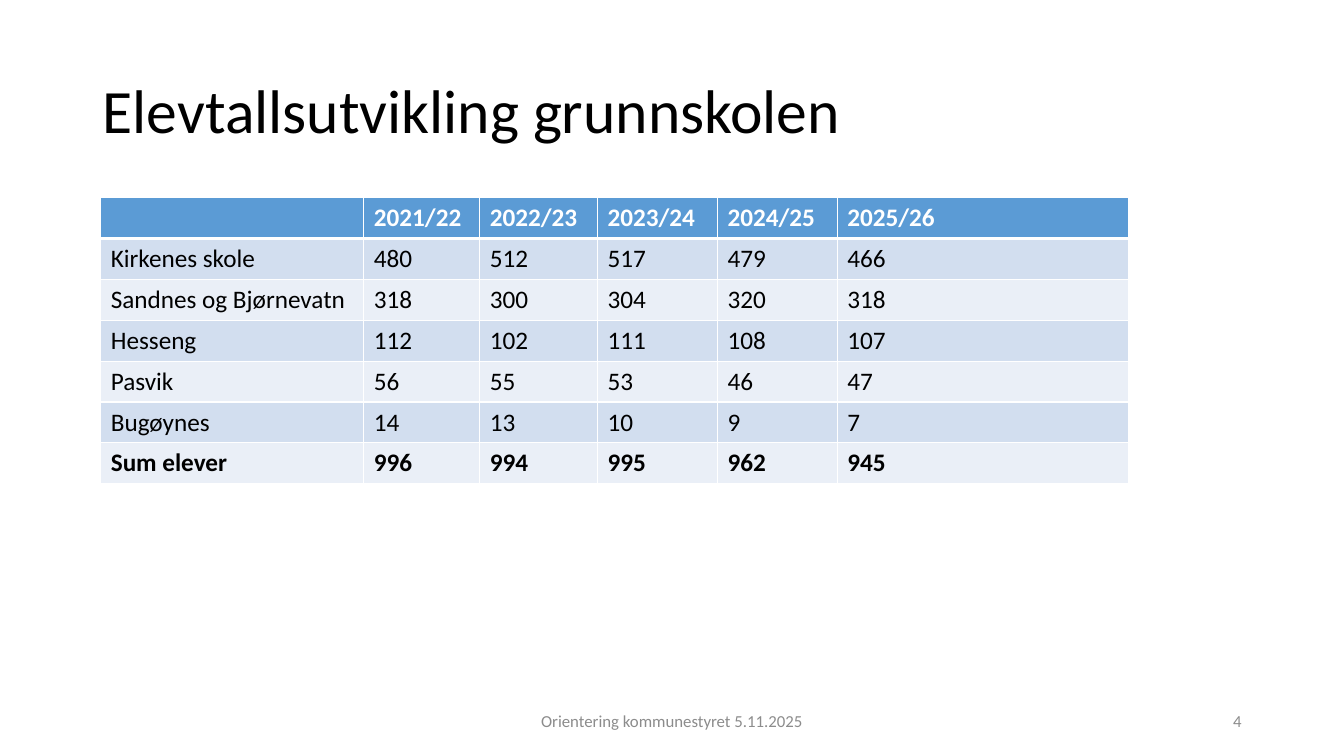
from dataclasses import dataclass

from lxml.etree import SubElement
from pptx import Presentation
from pptx.dml.color import RGBColor
from pptx.enum.text import MSO_ANCHOR as Anchor, PP_ALIGN as Align
from pptx.oxml.ns import qn
from pptx.util import Cm, Pt


@dataclass(frozen=True)
class Theme:
    font: str = "Calibri"
    title_size: int = 44
    table_size: int = 18
    footer_size: int = 12
    text: str = "000000"
    header_text: str = "FFFFFF"
    footer_text: str = "8C8C8C"
    header_fill: str = "5B9BD5"
    band_fills: tuple = ("D2DEEF", "EAEFF7")
    border: str = "FFFFFF"


THEME = Theme()

COLUMN_WIDTHS = (6.63, 2.92, 2.97, 3.02, 3.02, 7.34)
ROW_HEIGHT = 1.03
PUPILS = (
    ("", "2021/22", "2022/23", "2023/24", "2024/25", "2025/26"),
    ("Kirkenes skole", 480, 512, 517, 479, 466),
    ("Sandnes og Bjørnevatn", 318, 300, 304, 320, 318),
    ("Hesseng", 112, 102, 111, 108, 107),
    ("Pasvik", 56, 55, 53, 46, 47),
    ("Bugøynes", 14, 13, 10, 9, 7),
    ("Sum elever", 996, 994, 995, 962, 945),
)


def format_paragraph(para, size, color, bold=False, align=Align.LEFT):
    para.alignment = align
    para.font.name = THEME.font
    para.font.size = Pt(size)
    para.font.bold = bold
    para.font.color.rgb = RGBColor.from_string(color)


def place(box, left, top, width, height):
    box.left, box.top, box.width, box.height = map(Cm, (left, top, width, height))


def add_title(page, text):
    title = page.shapes.title
    place(title, 2.33, 1.01, 29.21, 3.68)
    title.text_frame.text = text
    title.text_frame.vertical_anchor = Anchor.MIDDLE
    para = title.text_frame.paragraphs[0]
    para.line_spacing = 0.9
    format_paragraph(para, THEME.title_size, THEME.text)


def add_footer(page, text, left, width, align):
    box = page.shapes.add_textbox(Cm(left), Cm(17.65), Cm(width), Cm(1.01))
    frame = box.text_frame
    frame.word_wrap = True
    frame.vertical_anchor = Anchor.MIDDLE
    frame.text = text
    format_paragraph(frame.paragraphs[0], THEME.footer_size, THEME.footer_text, align=align)


def set_borders(cell, bottom=1, top=1):
    """Draw the cell's border lines; call before filling, as the schema puts lines first."""
    properties = cell._tc.get_or_add_tcPr()
    for side, points in (("L", 1), ("R", 1), ("T", top), ("B", bottom)):
        line = SubElement(properties, qn(f"a:ln{side}"), w=str(Pt(points)))
        fill = SubElement(line, qn("a:solidFill"))
        SubElement(fill, qn("a:srgbClr"), val=THEME.border)


def add_pupil_table(page):
    frame = page.shapes.add_table(
        len(PUPILS), len(COLUMN_WIDTHS), Cm(2.54), Cm(4.98),
        Cm(sum(COLUMN_WIDTHS)), Cm(ROW_HEIGHT * len(PUPILS)),
    )
    table = frame.table
    for column, width in zip(table.columns, COLUMN_WIDTHS):
        column.width = Cm(width)
    last = len(PUPILS) - 1
    for index, (row, values) in enumerate(zip(table.rows, PUPILS)):
        row.height = Cm(ROW_HEIGHT)
        header = index == 0
        fill = THEME.header_fill if header else THEME.band_fills[(index - 1) % 2]
        color = THEME.header_text if header else THEME.text
        for cell, value in zip(row.cells, values):
            set_borders(cell, bottom=3 if header else 1, top=3 if index == 1 else 1)
            cell.fill.solid()
            cell.fill.fore_color.rgb = RGBColor.from_string(fill)
            cell.text = str(value)
            format_paragraph(cell.text_frame.paragraphs[0], THEME.table_size, color,
                             bold=index in (0, last))


def main():
    deck = Presentation()
    deck.slide_width, deck.slide_height = Cm(33.87), Cm(19.05)
    page = deck.slides.add_slide(deck.slide_layouts.get_by_name("Title Only"))
    add_title(page, "Elevtallsutvikling grunnskolen")
    add_pupil_table(page)
    add_footer(page, "Orientering kommunestyret 5.11.2025", 11.22, 11.43, Align.CENTER)
    add_footer(page, "4", 23.92, 7.62, Align.RIGHT)
    deck.save("out.pptx")


if __name__ == "__main__":
    main()
